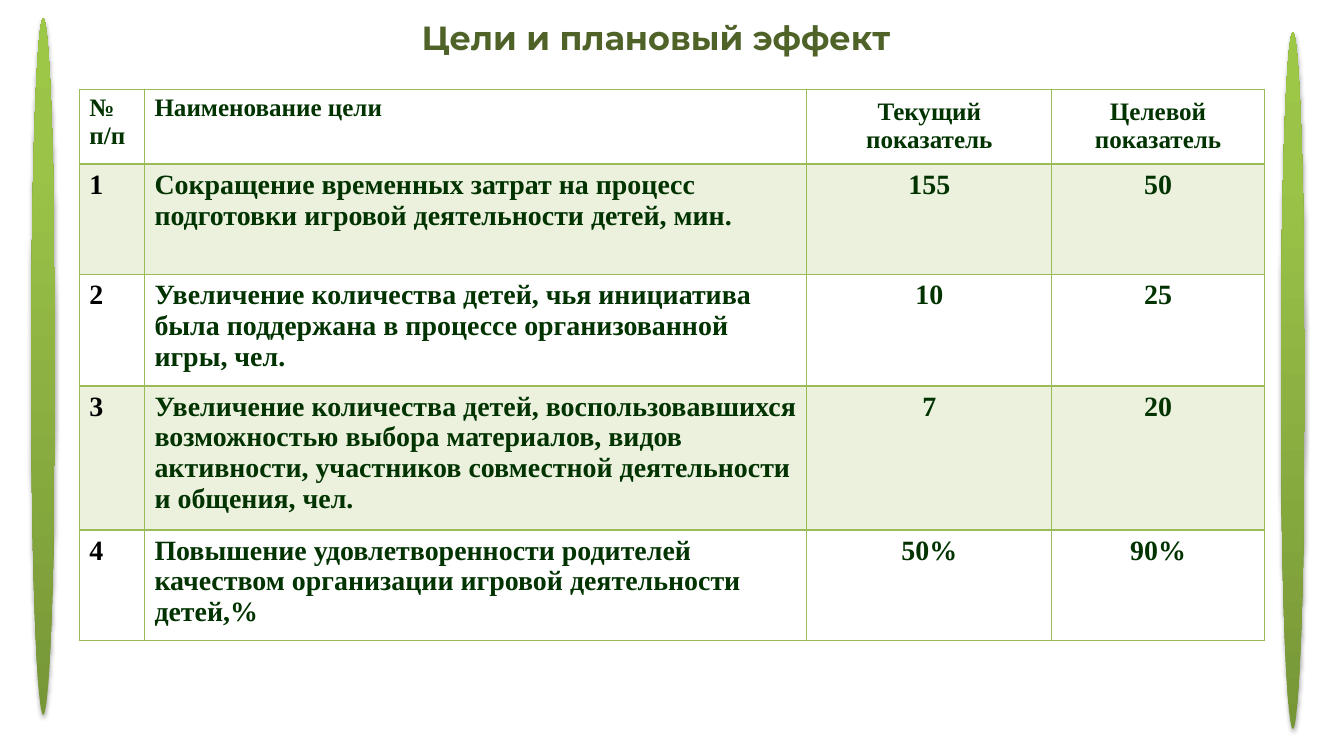
"""Build the slide with the table of goals and planned effect."""
import copy

import pptx
import pptx.dml.color
import pptx.enum.shapes
import pptx.enum.text
import pptx.oxml
import pptx.oxml.ns
import pptx.util

RGBColor = pptx.dml.color.RGBColor
TITLE_GREEN = RGBColor(0x4F, 0x62, 0x28)
DARK_GREEN = RGBColor(0x00, 0x33, 0x00)
TABLE_GREEN = RGBColor(0x9B, 0xBB, 0x59)
BLACK = RGBColor(0x00, 0x00, 0x00)
BLADE_STOPS = [
    (0, RGBColor(0x77, 0x97, 0x37)),
    (0.8, RGBColor(0x9B, 0xC3, 0x48)),
    (1, RGBColor(0x9D, 0xC7, 0x46)),
]
BAND_ALPHA = 20
SLIDE_WIDTH = pptx.util.Inches(13.39)
SLIDE_HEIGHT = pptx.util.Inches(7.48)
COLUMN_SHARES = [4.85, 49.29, 18.22, 15.83]
ROW_SHARES = [9.89, 14.71, 14.84, 19.12, 14.71]
CENTERED_COLUMNS = (2, 3)
GOALS = [
    ["№ п/п", "Наименование цели", "Текущий\nпоказатель", "Целевой\nпоказатель"],
    ["1", "Сокращение временных затрат на процесс подготовки игровой "
     "деятельности детей, мин.", "155", "50"],
    ["2", "Увеличение количества детей, чья инициатива была поддержана "
     "в процессе организованной игры, чел.", "10", "25"],
    ["3", "Увеличение количества детей, воспользовавшихся возможностью выбора "
     "материалов, видов активности, участников совместной деятельности "
     "и общения, чел.", "7", "20"],
    ["4", "Повышение удовлетворенности родителей качеством организации "
     "игровой деятельности детей,%", "50%", "90%"],
]


def across(percent):
    """Return a share of the slide width."""
    return round(SLIDE_WIDTH * percent / 100)


def down(percent):
    """Return a share of the slide height."""
    return round(SLIDE_HEIGHT * percent / 100)


def box(left, top, width, height):
    """Return a position and size from shares of the slide."""
    return across(left), down(top), across(width), down(height)


def drawing(content):
    """Parse an element of the drawing namespace."""
    name, rest = content[1:].split(" ", 1)
    namespace = pptx.oxml.ns.nsdecls("a")
    return pptx.oxml.parse_xml(f"<{name} {namespace} {rest}")


def style_font(paragraph, name, size, color):
    """Set a bold font on a paragraph."""
    font = paragraph.font
    font.name, font.size, font.bold = name, pptx.util.Pt(size), True
    font.color.rgb = color


def add_title(slide, text):
    """Add the centred slide title."""
    frame = slide.shapes.add_textbox(*box(29.42, 1.6, 38.76, 6.68)).text_frame
    frame.word_wrap = False
    frame.auto_size = pptx.enum.text.MSO_AUTO_SIZE.SHAPE_TO_FIT_TEXT
    paragraph = frame.paragraphs[0]
    paragraph.text = text
    paragraph.alignment = pptx.enum.text.PP_ALIGN.CENTER
    style_font(paragraph, "Montserrat", 24, TITLE_GREEN)


def add_blade(slide, left, top):
    """Add a tall gradient ellipse with a soft shadow."""
    ellipse = pptx.enum.shapes.MSO_SHAPE.OVAL
    shape = slide.shapes.add_shape(ellipse, *box(left, top, 1.79, 92.78))
    shape.line.fill.background()
    shape.fill.gradient()
    shape.fill.gradient_angle = 90
    properties = shape.element.spPr
    stops = properties.find(".//" + pptx.oxml.ns.qn("a:gsLst"))
    stops.append(copy.deepcopy(stops[0]))
    for stop, (position, color) in zip(shape.fill.gradient_stops, BLADE_STOPS):
        stop.position = position
        stop.color.rgb = color
    shape.shadow.inherit = False
    properties.find(pptx.oxml.ns.qn("a:effectLst")).append(drawing(
        f'<a:outerShdw blurRad="{pptx.util.Pt(3.1)}" dist="{pptx.util.Pt(1.8)}" '
        f'dir="5400000" rotWithShape="0"><a:srgbClr val="{BLACK}">'
        '<a:alpha val="35000"/></a:srgbClr></a:outerShdw>'))


def draw_borders(cell, row):
    """Draw cell borders, with a thicker line below the header."""
    widths = {"L": 1, "R": 1, "T": 2 if row == 1 else 1, "B": 2 if row == 0 else 1}
    properties = cell._tc.get_or_add_tcPr()
    for side, width in widths.items():
        properties.append(drawing(
            f'<a:ln{side} w="{pptx.util.Pt(width)}"><a:solidFill>'
            f'<a:srgbClr val="{TABLE_GREEN}"/></a:solidFill></a:ln{side}>'))


def fill_cell(cell, row):
    """Tint odd rows and leave the others clear."""
    if row % 2 == 0:
        cell.fill.background()
        return
    cell.fill.solid()
    cell.fill.fore_color.rgb = TABLE_GREEN
    color = cell._tc.tcPr.find(".//" + pptx.oxml.ns.qn("a:solidFill") + "[last()]")
    color = cell._tc.tcPr.find(pptx.oxml.ns.qn("a:solidFill"))[0]
    color.append(drawing(f'<a:alpha val="{BAND_ALPHA * 1000}"/>'))


def write_cell(cell, text, row, column):
    """Write the text of a cell with its font and alignment."""
    cell.text = text
    number = row > 0 and column == 0
    for paragraph in cell.text_frame.paragraphs:
        if column in CENTERED_COLUMNS:
            paragraph.alignment = pptx.enum.text.PP_ALIGN.CENTER
        style_font(paragraph, "Times New Roman", 20 if row else 18,
                   BLACK if number else DARK_GREEN)
    if row == 0 and column in CENTERED_COLUMNS:
        cell.text_frame.paragraphs[0].line_spacing = 1.15


def add_goal_table(slide):
    """Add the table of goals with current and target values."""
    place = box(5.9, 11.9, sum(COLUMN_SHARES), sum(ROW_SHARES))
    table = slide.shapes.add_table(len(GOALS), len(COLUMN_SHARES), *place).table
    for column, share in zip(table.columns, COLUMN_SHARES):
        column.width = across(share)
    for row, share in zip(table.rows, ROW_SHARES):
        row.height = down(share)
    for row, texts in enumerate(GOALS):
        for column, text in enumerate(texts):
            cell = table.cell(row, column)
            write_cell(cell, text, row, column)
            draw_borders(cell, row)
            fill_cell(cell, row)


def main():
    """Build and save the presentation."""
    presentation = pptx.Presentation()
    presentation.slide_width = SLIDE_WIDTH
    presentation.slide_height = SLIDE_HEIGHT
    slide = presentation.slides.add_slide(presentation.slide_layouts[6])
    add_title(slide, "Цели и плановый эффект")
    add_blade(slide, 2.32, 2.41)
    add_blade(slide, 95.3, 4.28)
    add_goal_table(slide)
    presentation.save("out.pptx")


if __name__ == "__main__":
    main()
